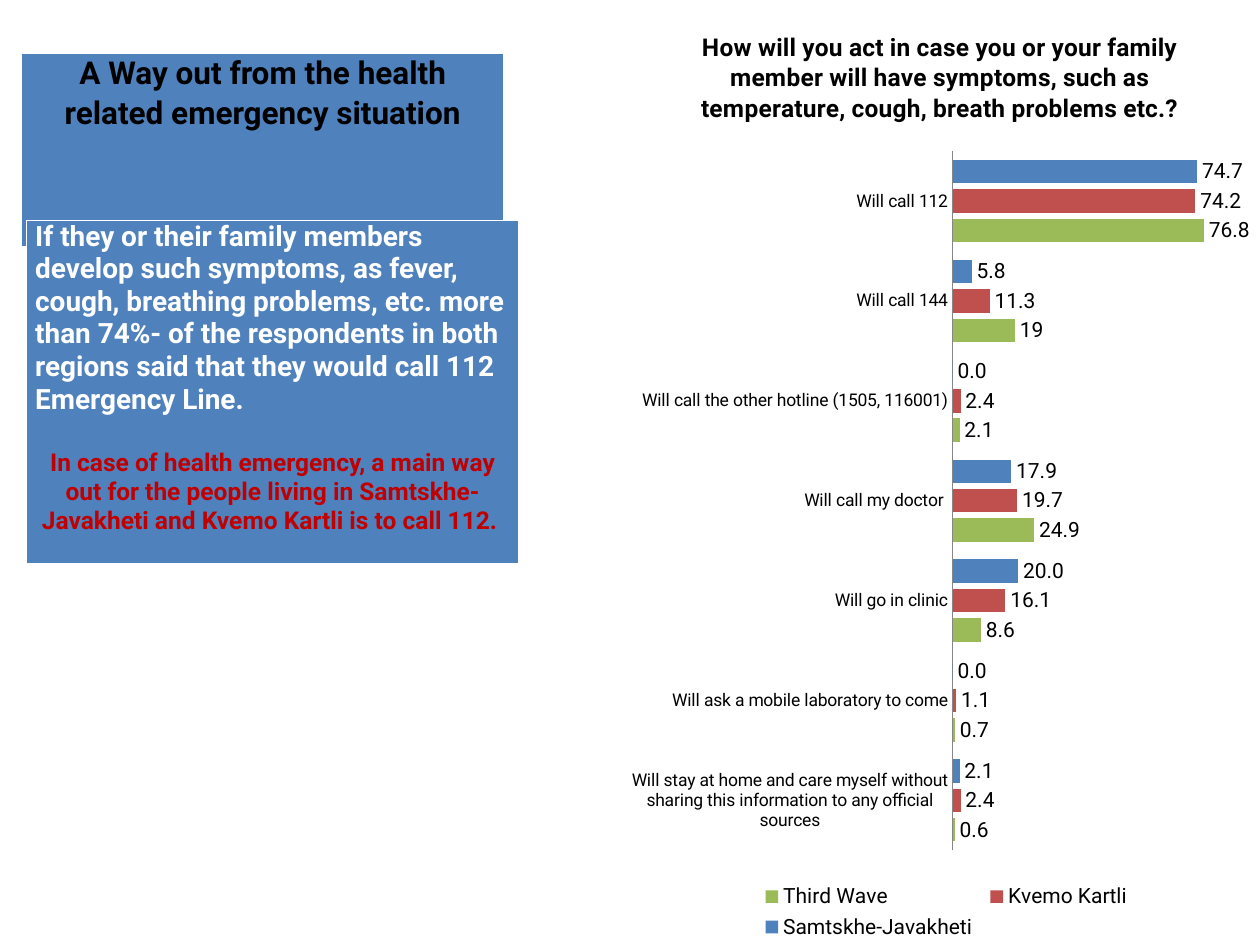
from lxml import etree
from pptx import Presentation
from pptx.chart.data import CategoryChartData
from pptx.dml.color import RGBColor
from pptx.enum.chart import XL_CHART_TYPE, XL_LEGEND_POSITION, XL_TICK_MARK
from pptx.enum.text import PP_ALIGN
from pptx.oxml import parse_xml
from pptx.oxml.ns import nsdecls, qn
from pptx.util import Inches, Pt

BAR_CLUSTERED = XL_CHART_TYPE.BAR_CLUSTERED
LEGEND_BOTTOM = XL_LEGEND_POSITION.BOTTOM
NO_TICKS = XL_TICK_MARK.NONE
CENTER, LEFT = PP_ALIGN.CENTER, PP_ALIGN.LEFT

FONT = "Roboto"
BLACK = RGBColor(0x00, 0x00, 0x00)
WHITE = RGBColor(0xFF, 0xFF, 0xFF)
GRAY = RGBColor(0x86, 0x86, 0x86)
BLUE = RGBColor(0x4F, 0x81, 0xBD)
RED = RGBColor(0xC0, 0x50, 0x4D)
GREEN = RGBColor(0x9B, 0xBB, 0x59)
DARK_RED = RGBColor(0xC0, 0x00, 0x00)

HEADING = "A Way out from the health related emergency situation"
FINDING = (
    "If they or their family members develop such symptoms, as fever, cough, "
    "breathing problems, etc. more than 74%- of the respondents in both regions "
    "said that they would call 112 Emergency Line."
)
CONCLUSION = (
    "In case of health emergency, a main way out for the people living in "
    "Samtskhe-Javakheti and Kvemo Kartli is to call 112. "
)
QUESTION = (
    "How will you act in case you or your family member will have symptoms, "
    "such as temperature, cough, breath problems etc.?"
)
ANSWERS = [
    "Will call 112",
    "Will call 144",
    "Will call the other hotline (1505, 116001)",
    "Will call my doctor ",
    "Will go in clinic",
    "Will ask a mobile laboratory to come",
    "Will stay at home and care myself without sharing this information "
    "to any official sources",
]
REGIONS = [
    ("Samtskhe-Javakheti", [74.7, 5.8, 0, 17.9, 20, 0, 2.1], BLUE, "###0.0"),
    ("Kvemo Kartli", [74.2, 11.3, 2.4, 19.7, 16.1, 1.1, 2.4], RED, "###0.0"),
    ("Third Wave", [76.8, 19, 2.1, 24.9, 8.6, 0.7, 0.6], GREEN, "General"),
]


def set_font(font, size, color, bold=False):
    font.name = FONT
    font.size = Pt(size)
    font.bold = bold
    font.color.rgb = color


def set_borders(cell):
    properties = cell._tc.get_or_add_tcPr()
    sides = (("lnL", 1), ("lnR", 1), ("lnT", 1), ("lnB", 3))
    for position, (side, width) in enumerate(sides):
        border = parse_xml(
            f'<a:{side} {nsdecls("a")} w="{Pt(width)}"><a:solidFill>'
            f'<a:srgbClr val="{WHITE}"/></a:solidFill></a:{side}>'
        )
        properties.insert(position, border)


def set_layout(parent, position, fractions, inner=False):
    """Fix a chart part at x, y, w, h, given as fractions of the chart."""
    for old in parent.findall(qn("c:layout")):
        parent.remove(old)
    layout = etree.Element(qn("c:layout"))
    manual = etree.SubElement(layout, qn("c:manualLayout"))
    settings = [("layoutTarget", "inner")] if inner else []
    settings += [("xMode", "edge"), ("yMode", "edge")]
    settings += zip("xywh", fractions)
    for tag, value in settings:
        etree.SubElement(manual, qn(f"c:{tag}")).set("val", str(value))
    parent.insert(position, layout)


def add_text_panel(slide, box, paragraphs):
    """Add a one-cell table; paragraphs are (text, size, color, align, line, before)."""
    table = slide.shapes.add_table(1, 1, *box).table
    table.first_row = table.horz_banding = False
    cell = table.cell(0, 0)
    cell.fill.solid()
    cell.fill.fore_color.rgb = BLUE
    cell.margin_left = cell.margin_right = Inches(0.07)
    cell.margin_top = cell.margin_bottom = 0
    set_borders(cell)
    frame = cell.text_frame
    for index, (text, size, color, align, line, before) in enumerate(paragraphs):
        paragraph = frame.add_paragraph() if index else frame.paragraphs[0]
        paragraph.text = text
        paragraph.alignment = align
        paragraph.line_spacing = line
        paragraph.space_before = Pt(before)
        set_font(paragraph.font, size, color, bold=True)


def add_answers_chart(slide, box):
    data = CategoryChartData()
    data.categories = ANSWERS
    for name, values, _, number_format in REGIONS:
        data.add_series(name, values, number_format)
    chart = slide.shapes.add_chart(BAR_CLUSTERED, *box, data).chart
    set_font(chart.font, 12, BLACK)

    chart.has_title = True
    title = chart.chart_title.text_frame
    title.text = QUESTION
    set_font(title.paragraphs[0].font, 14, BLACK, bold=True)

    chart.has_legend = True
    chart.legend.position = LEGEND_BOTTOM
    chart.legend.include_in_layout = False
    set_layout(chart.legend._element, 1, (0.21, 0.93, 0.6, 0.07))

    answer_axis = chart.category_axis
    answer_axis.reverse_order = True
    answer_axis.major_tick_mark = answer_axis.minor_tick_mark = NO_TICKS
    answer_axis.format.line.color.rgb = GRAY
    set_font(answer_axis.tick_labels.font, 10, BLACK)
    chart.value_axis.visible = False
    chart.value_axis.has_major_gridlines = False
    chart.value_axis.minimum_scale = 0
    chart.value_axis.maximum_scale = 90

    plot = chart.plots[0]
    plot.gap_width = 75
    plot.overlap = -25
    plot.vary_by_categories = False
    set_layout(plot._element.getparent(), 0, (0.52, 0.16, 0.46, 0.74), inner=True)
    for series, (_, _, color, number_format) in zip(plot.series, REGIONS):
        series.format.fill.solid()
        series.format.fill.fore_color.rgb = color
        labels = series.data_labels
        labels.show_value = True
        labels.number_format = number_format
        labels.number_format_is_linked = False
        set_font(labels.font, 12, BLACK)


def main():
    presentation = Presentation()
    presentation.slide_width = Inches(10)
    presentation.slide_height = Inches(7.5)
    slide = presentation.slides.add_slide(presentation.slide_layouts[6])

    add_answers_chart(slide, (Inches(4.92), 0, Inches(5.08), Inches(7.5)))
    add_text_panel(
        slide,
        (Inches(0.17), Inches(0.42), Inches(3.83), Inches(1.55)),
        [(HEADING, 18, BLACK, CENTER, 1.07, 0)],
    )
    add_text_panel(
        slide,
        (Inches(0.21), Inches(1.75), Inches(3.91), Inches(2.74)),
        [
            (FINDING, 16, WHITE, LEFT, 1, 0),
            (CONCLUSION, 14, DARK_RED, CENTER, 1, 19),
        ],
    )
    presentation.save("out.pptx")


if __name__ == "__main__":
    main()
